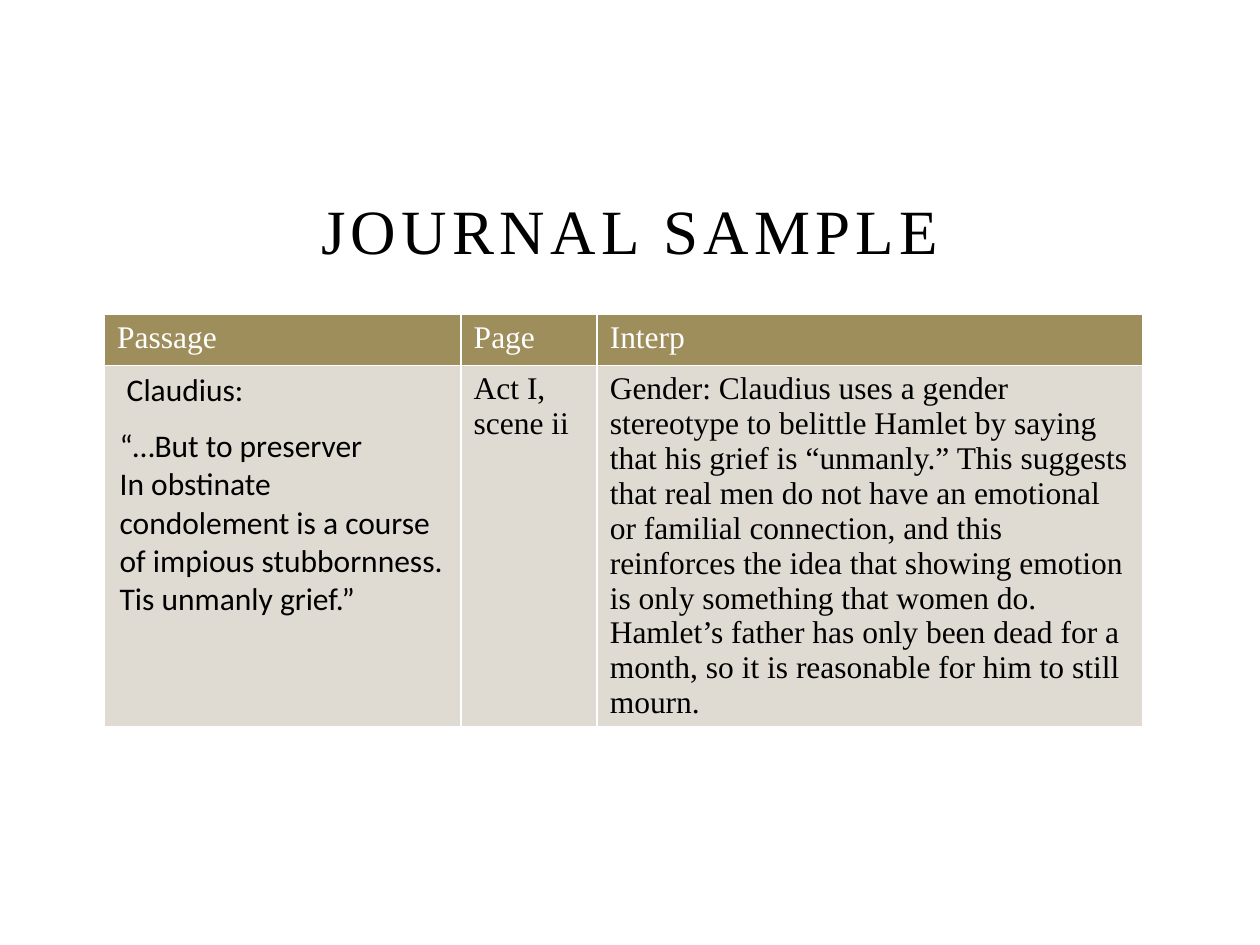
from pptx import Presentation
from pptx.dml.color import RGBColor as RGB
from pptx.enum.text import MSO_ANCHOR as ANCHOR, MSO_AUTO_SIZE as AUTO, PP_ALIGN as ALIGN
from pptx.oxml import parse_xml
from pptx.oxml.ns import nsdecls
from pptx.util import Inches, Pt

COLORS = {"text": "000000", "white": "FFFFFF", "header": "9E8E5C", "body": "DFDBD2"}
SERIF, SANS = "Times New Roman", "Calibri"

HEADER = ["Passage", "Page", "Interp"]
ENTRY = [
    " Claudius:\n“…But to preserver\nIn obstinate condolement is a course of impious "
    "stubbornness. Tis unmanly grief.”",
    "Act I, scene ii",
    "Gender: Claudius uses a gender stereotype to belittle Hamlet by saying that his grief "
    "is “unmanly.” This suggests that real men do not have an emotional or familial "
    "connection, and this reinforces the idea that showing emotion is only something that "
    "women do. Hamlet’s father has only been dead for a month, so it is reasonable for him "
    "to still mourn.",
]


class SlideBuilder:
    def __init__(self, slide):
        self.slide = slide

    def style(self, tf, size, color, font):
        for p in tf.paragraphs:
            for r in p.runs:
                r.font.size = Pt(size)
                r.font.name = font
                r.font.bold = False
                r.font.color.rgb = RGB.from_string(COLORS[color])

    def title(self, text, left, top, width, height):
        sp = self.slide.shapes.title
        sp.left, sp.top = Inches(left), Inches(top)
        sp.width, sp.height = Inches(width), Inches(height)
        tf = sp.text_frame
        tf.text = text
        tf.word_wrap = True
        tf.auto_size = AUTO.NONE
        tf.vertical_anchor = ANCHOR.BOTTOM
        p = tf.paragraphs[0]
        p.alignment = ALIGN.CENTER
        self.style(tf, 36, "text", SERIF)
        p.runs[0].font._element.set("spc", "300")

    def border(self, cell):
        tc_pr = cell._tc.get_or_add_tcPr()
        for i, side in enumerate(("lnL", "lnR", "lnT", "lnB")):
            tc_pr.insert(i, parse_xml(
                f'<a:{side} {nsdecls("a")} w="{Pt(1)}"><a:solidFill>'
                f'<a:srgbClr val="{COLORS["white"]}"/></a:solidFill></a:{side}>'))

    def table(self, rows, left, top, widths, heights):
        table = self.slide.shapes.add_table(
            len(rows), len(widths), Inches(left), Inches(top),
            Inches(sum(widths)), Inches(sum(heights))).table
        table.horz_banding = False
        for col, width in zip(table.columns, widths):
            col.width = Inches(width)
        for i, (row, height) in enumerate(zip(rows, heights)):
            table.rows[i].height = Inches(height)
            for j, text in enumerate(row):
                cell = table.cell(i, j)
                cell.text_frame.text = text
                cell.fill.solid()
                cell.fill.fore_color.rgb = RGB.from_string(COLORS["body" if i else "header"])
                self.style(cell.text_frame, 18, "text" if i else "white", SERIF)
                self.border(cell)
        return table

    def passage(self, cell):
        cell.margin_left = cell.margin_right = Inches(0.12)
        cell.margin_top = cell.margin_bottom = 0
        self.style(cell.text_frame, 18, "text", SANS)
        p = cell.text_frame.paragraphs[0]
        p.line_spacing = 1.15
        p.space_after = Pt(10)


def main():
    prs = Presentation()
    prs.slide_width, prs.slide_height = Inches(10), Inches(7.5)
    s = SlideBuilder(prs.slides.add_slide(prs.slide_layouts[5]))
    s.title("JOURNAL SAMPLE", 1.5, 1.42, 7, 0.75)
    table = s.table([HEADER, ENTRY], 0.83, 2.49, [2.83, 1.08, 4.33], [0.41, 2.8])
    s.passage(table.cell(1, 0))
    prs.save("out.pptx")


if __name__ == "__main__":
    main()
